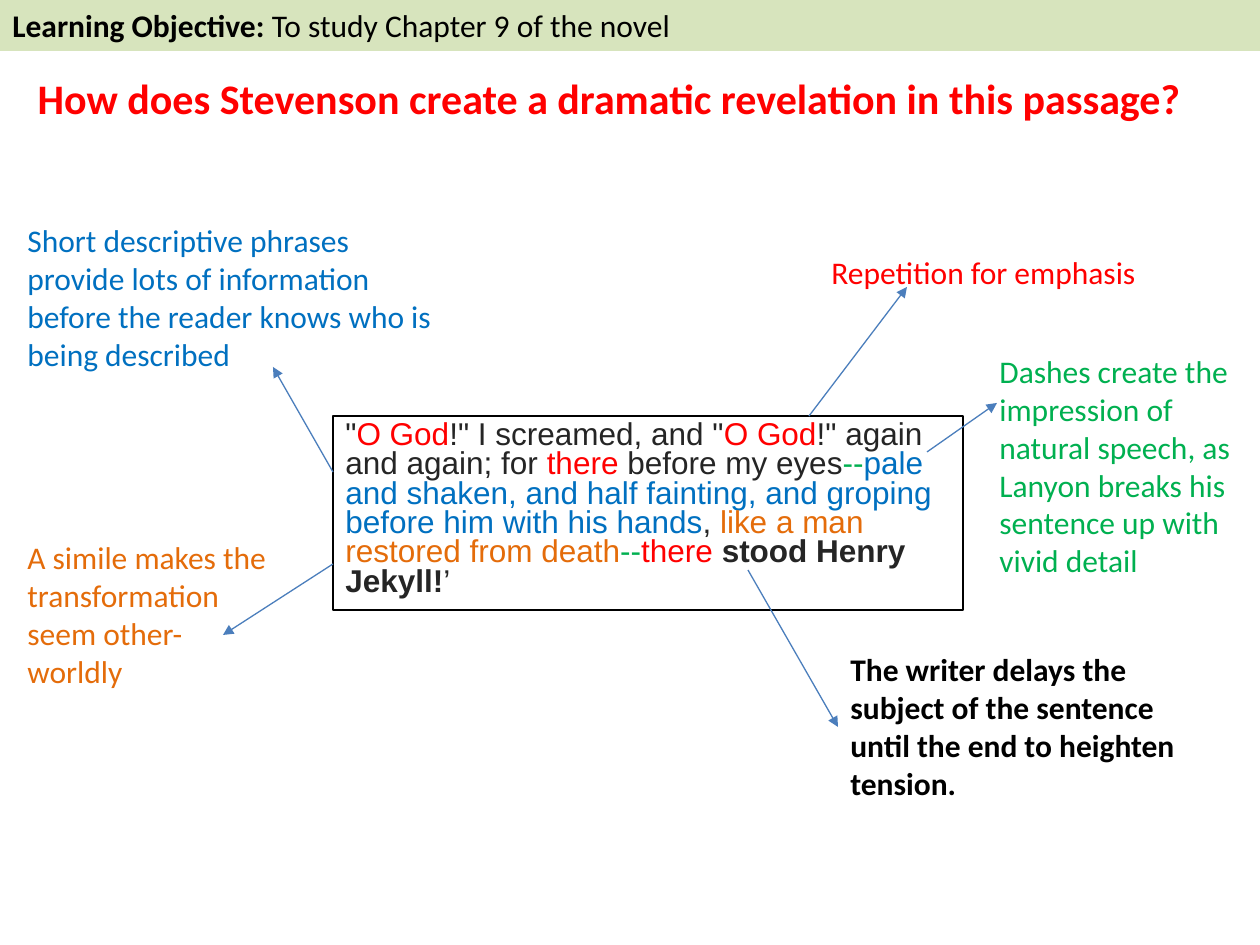
import pptx
import pptx.dml.color
import pptx.enum.shapes
import pptx.enum.text
import pptx.oxml
import pptx.oxml.ns
import pptx.util

PX = 914400 / 126
COLOURS = {
    "black": "000000", "white": "FFFFFF", "banner": "D7E4BD", "ink": "252525",
    "red": "FF0000", "green": "00B050", "blue": "0070C0", "orange": "E46C0A",
    "arrow": "4B7EBC",
}


def px(n):
    return pptx.util.Emu(round(n * PX))


def rgb(name):
    return pptx.dml.color.RGBColor.from_string(COLOURS[name])


def add_run(p, text, colour="black", bold=False, size=18, font="Calibri"):
    r = p.add_run()
    r.text = text
    r.font.name = font
    r.font.size = pptx.util.Pt(size)
    r.font.bold = bold
    r.font.color.rgb = rgb(colour)


class SlideBuilder:
    def __init__(self, prs):
        self.slide = prs.slides.add_slide(prs.slide_layouts[5])
        self.shapes = self.slide.shapes

    def prepare(self, sp):
        """Set up left-aligned, top-anchored, wrapped text and return its paragraph."""
        tf = sp.text_frame
        tf.word_wrap = True
        tf.auto_size = pptx.enum.text.MSO_AUTO_SIZE.SHAPE_TO_FIT_TEXT
        tf.vertical_anchor = pptx.enum.text.MSO_ANCHOR.TOP
        p = tf.paragraphs[0]
        p.alignment = pptx.enum.text.PP_ALIGN.LEFT
        return p

    def title(self, text, x, y, w, h):
        sp = self.shapes.title
        sp.left, sp.top, sp.width, sp.height = map(px, (x, y, w, h))
        sp.fill.solid()
        sp.fill.fore_color.rgb = rgb("white")
        add_run(self.prepare(sp), text, "red", bold=True, size=24)

    def box(self, x, y, w, h, fill=None, line=None):
        """Add a rectangle and return its paragraph."""
        sp = self.shapes.add_shape(
            pptx.enum.shapes.MSO_SHAPE.RECTANGLE, *map(px, (x, y, w, h)))
        sp.shadow.inherit = False
        if fill:
            sp.fill.solid()
            sp.fill.fore_color.rgb = rgb(fill)
        else:
            sp.fill.background()
        if line:
            sp.line.color.rgb = rgb(line)
            sp.line.width = pptx.util.Pt(0.75)
        else:
            sp.line.fill.background()
        return self.prepare(sp)

    def note(self, text, x, y, w, h, **style):
        sp = self.shapes.add_textbox(*map(px, (x, y, w, h)))
        add_run(self.prepare(sp), text, **style)

    def arrow(self, x1, y1, x2, y2):
        cxn = self.shapes.add_connector(
            pptx.enum.shapes.MSO_CONNECTOR.STRAIGHT, *map(px, (x1, y1, x2, y2)))
        cxn.line.color.rgb = rgb("arrow")
        cxn.line.width = pptx.util.Pt(0.75)
        tail = pptx.oxml.parse_xml(
            f'<a:tailEnd {pptx.oxml.ns.nsdecls("a")} type="triangle"/>')
        cxn.line._get_or_add_ln().append(tail)
        cxn._element.spPr.append(
            pptx.oxml.parse_xml(f'<a:effectLst {pptx.oxml.ns.nsdecls("a")}/>'))


QUOTE = [
    ('"', "ink"), ("O God", "red"), ('!" I screamed, and "', "ink"),
    ("O God", "red"), ('!" again and again; for ', "ink"), ("there", "red"),
    (" before my eyes", "ink"), ("--", "green"),
    ("pale and shaken, and half fainting, and groping before him with his hands",
     "blue"),
    (", ", "ink"), ("like a man restored from death", "orange"),
    ("--", "green"), ("there ", "red"), ("stood Henry Jekyll!", "ink", True),
    ("’", "ink"),
]

NOTES = [
    ("Repetition for emphasis", (819, 247, 357, 51), "red"),
    ("Dashes create the impression of natural speech, as Lanyon breaks his "
     "sentence up with vivid detail", (987, 346, 268, 242), "green"),
    ("Short descriptive phrases provide lots of information before the reader "
     "knows who is being described", (15, 215, 436, 165), "blue"),
    ("A simile makes the transformation seem other-worldly",
     (15, 532, 268, 165), "orange"),
    ("The writer delays the subject of the sentence until the end to heighten "
     "tension.", (838, 644, 377, 165), "black"),
]

ARROWS = [
    (809, 416, 907, 287), (927, 452, 997, 403), (333, 472, 273, 367),
    (333, 564, 223, 635), (748, 570, 838, 727),
]


def main():
    prs = pptx.Presentation()
    prs.slide_width, prs.slide_height = px(1260), px(945)
    s = SlideBuilder(prs)

    s.title("How does Stevenson create a dramatic revelation in this passage?",
            25, 66, 1221, 63)

    p = s.box(0, 0, 1260, 51, fill="banner")
    add_run(p, "Learning Objective: ", bold=True)
    add_run(p, "To study Chapter 9 of the novel")

    p = s.box(333, 416, 630, 194, line="black")
    p.line_spacing = pptx.util.Pt(16.8)
    p.space_before = p.space_after = pptx.util.Pt(6)
    for part in QUOTE:
        add_run(p, *part, font="Arial")

    for text, place, colour in NOTES:
        s.note(text, *place, colour=colour, bold=colour == "black")
    for ends in ARROWS:
        s.arrow(*ends)

    prs.save("out.pptx")


if __name__ == "__main__":
    main()
